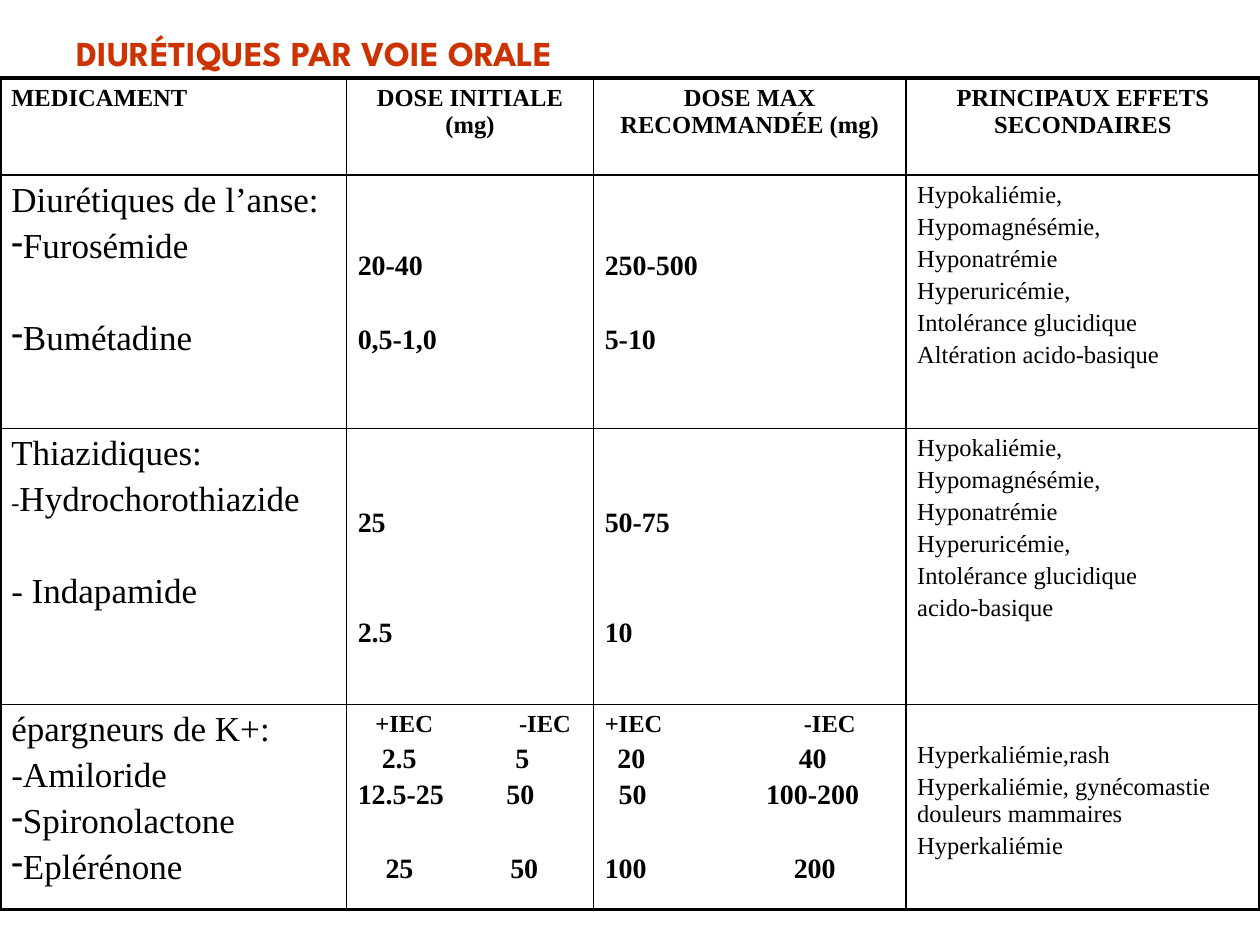
from dataclasses import dataclass

from lxml import etree
from pptx import Presentation
from pptx import util as u
from pptx.dml.color import RGBColor
from pptx.enum import text
from pptx.oxml import ns


@dataclass(frozen=True)
class Theme:
    title_font: str = "League Spartan"
    body_font: str = "Times New Roman"
    title_color: str = "CC3300"
    ink: str = "000000"
    small: int = 14
    dose: int = 16
    large: int = 20
    outer_line: float = 2.25
    inner_line: float = 1
    line_gap: float = 0.2
    line_pitch: float = 1.31


THEME = Theme()
COLUMN_WIDTHS = [2.75, 1.96, 2.48, 2.81]
ROW_HEIGHTS = [0.77, 2.01, 2.19, 1.63]
MARGIN_X, MARGIN_Y = 0.09, 0.05

HEADERS = [
    "MEDICAMENT",
    "DOSE INITIALE (mg)",
    "DOSE MAX RECOMMANDÉE (mg)",
    "PRINCIPAUX EFFETS SECONDAIRES",
]
COMMON_EFFECTS = [
    "Hypokaliémie,",
    "Hypomagnésémie,",
    "Hyponatrémie",
    "Hyperuricémie,",
    "Intolérance glucidique",
]


def line(content, **options):
    return content, options


DRUGS = [
    [line("Diurétiques de l’anse:"), line("Furosémide", bullet="-"),
     line("Bumétadine", bullet="-", skipped=1)],
    [line("Thiazidiques:"),
     line([("-", THEME.small), ("Hydrochorothiazide", THEME.large)]),
     line("- Indapamide", skipped=1)],
    [line("épargneurs de K+:"), line("-Amiloride"),
     line("Spironolactone", bullet="-"), line("Eplérénone", bullet="-")],
]
SINGLE_DOSES = [
    {"rows": [("20-40", "250-500"), ("0,5-1,0", "5-10")], "skipped": 1, "top": 0.6},
    {"rows": [("25", "50-75"), ("2.5", "10")], "skipped": 2, "top": 0.63},
]
PAIRED_DOSES = [
    [[(0.14, "+IEC"), (1.28, "-IEC")], [(0.19, "2.5"), (1.25, "5")],
     [(0, "12.5-25"), (1.18, "50")], [(0.22, "25"), (1.21, "50")]],
    [[(0, "+IEC"), (1.58, "-IEC")], [(0.1, "20"), (1.54, "40")],
     [(0.11, "50"), (1.28, "100-200")], [(0, "100"), (1.5, "200")]],
]
EFFECTS = [
    COMMON_EFFECTS + ["Altération acido-basique"],
    COMMON_EFFECTS + ["acido-basique"],
    ["Hyperkaliémie,rash", "Hyperkaliémie, gynécomastie douleurs mammaires",
     "Hyperkaliémie"],
]


def add_text(frame, content, size, first=False, bold=False, font=THEME.body_font,
             color=THEME.ink, align=text.PP_ALIGN.LEFT, skipped=0, bullet=None,
             tabs=()):
    paragraph = frame.paragraphs[0] if first else frame.add_paragraph()
    paragraph.alignment = align
    gap = 0 if first else size * (THEME.line_gap + skipped * THEME.line_pitch)
    paragraph.space_before = u.Pt(round(gap, 1))
    properties = paragraph._p.get_or_add_pPr()
    if bullet:
        properties.set("marL", "0")
        properties.set("indent", "0")
        etree.SubElement(properties, ns.qn("a:buFontTx"))
        etree.SubElement(properties, ns.qn("a:buChar"), char=bullet)
    if tabs:
        tab_list = etree.SubElement(properties, ns.qn("a:tabLst"))
        for position in tabs:
            etree.SubElement(tab_list, ns.qn("a:tab"),
                             pos=str(int(u.Inches(position))), algn="l")
    pieces = [(content, size)] if isinstance(content, str) else content
    for words, piece_size in pieces:
        run = paragraph.add_run()
        run.text = words
        run.font.name = font
        run.font.size = u.Pt(piece_size)
        run.font.bold = bold
        run.font.color.rgb = RGBColor.from_string(color)
    return paragraph


def fill_cell(cell, lines, top=MARGIN_Y, **shared):
    cell.margin_left = cell.margin_right = u.Inches(MARGIN_X)
    cell.margin_top, cell.margin_bottom = u.Inches(top), u.Inches(MARGIN_Y)
    cell.vertical_anchor = text.MSO_ANCHOR.TOP
    cell.text_frame.word_wrap = True
    for index, (content, options) in enumerate(lines):
        add_text(cell.text_frame, content, first=index == 0, **{**shared, **options})


def tabbed_line(pairs, **options):
    tabs = [position for position, _ in pairs if position]
    content = "".join(("\t" if position else "") + words for position, words in pairs)
    return line(content, tabs=tabs, **options)


def add_borders(cell, outer_sides):
    properties = cell._tc.get_or_add_tcPr()
    for side in "LRTB":
        width = THEME.outer_line if side in outer_sides else THEME.inner_line
        border = etree.SubElement(properties, ns.qn("a:ln" + side),
                                  w=str(int(u.Pt(width))))
        fill = etree.SubElement(border, ns.qn("a:solidFill"))
        etree.SubElement(fill, ns.qn("a:srgbClr"), val=THEME.ink)
    cell.fill.background()


def format_grid(table):
    last_row, last_column = len(ROW_HEIGHTS) - 1, len(COLUMN_WIDTHS) - 1
    for row, height in enumerate(ROW_HEIGHTS):
        table.rows[row].height = u.Inches(height)
        for column, width in enumerate(COLUMN_WIDTHS):
            table.columns[column].width = u.Inches(width)
            edges = {"L": column == 0, "R": column == last_column,
                     "T": row == 0, "B": row == last_row}
            add_borders(table.cell(row, column),
                        [side for side, outer in edges.items() if outer])


def add_title(slide, left, top, width, height):
    title = slide.shapes.title
    title.left, title.top, title.width, title.height = left, top, width, height
    title.text_frame.vertical_anchor = text.MSO_ANCHOR.MIDDLE
    paragraph = add_text(title.text_frame, "DIURÉTIQUES PAR VOIE ORALE", THEME.large,
                         first=True, bold=True, font=THEME.title_font,
                         color=THEME.title_color)
    paragraph.line_spacing = 0.9


def add_drug_table(slide, left, top, width, height):
    table = slide.shapes.add_table(len(ROW_HEIGHTS), len(COLUMN_WIDTHS),
                                   left, top, width, height).table
    table.first_row = table.horz_banding = False
    format_grid(table)

    for column, header in enumerate(HEADERS):
        align = text.PP_ALIGN.CENTER if column else text.PP_ALIGN.LEFT
        fill_cell(table.cell(0, column), [line(header)], size=THEME.small,
                  bold=True, align=align)
    for row, (drugs, effects) in enumerate(zip(DRUGS, EFFECTS), 1):
        fill_cell(table.cell(row, 0), drugs, size=THEME.large)
        fill_cell(table.cell(row, 3), [line(effect) for effect in effects],
                  size=THEME.small, top=0.3 if row == 3 else MARGIN_Y)
    for row, group in enumerate(SINGLE_DOSES, 1):
        for column, doses in enumerate(zip(*group["rows"]), 1):
            fill_cell(table.cell(row, column), [line(dose) for dose in doses],
                      size=THEME.dose, bold=True, skipped=group["skipped"],
                      top=group["top"])
    for column, (heading, *doses, last) in enumerate(PAIRED_DOSES, 1):
        lines = [tabbed_line(heading, size=THEME.small)]
        lines += [tabbed_line(pair) for pair in doses]
        lines.append(tabbed_line(last, skipped=1))
        fill_cell(table.cell(3, column), lines, size=THEME.dose, bold=True)


def main():
    presentation = Presentation()
    presentation.slide_width, presentation.slide_height = u.Inches(10), u.Inches(7.5)
    slide = presentation.slides.add_slide(presentation.slide_layouts[5])
    add_title(slide, u.Inches(0.51), u.Inches(-0.19), u.Inches(9), u.Inches(1.25))
    add_drug_table(slide, u.Inches(0), u.Inches(0.62), u.Inches(10), u.Inches(6.6))
    presentation.save("out.pptx")


if __name__ == "__main__":
    main()
